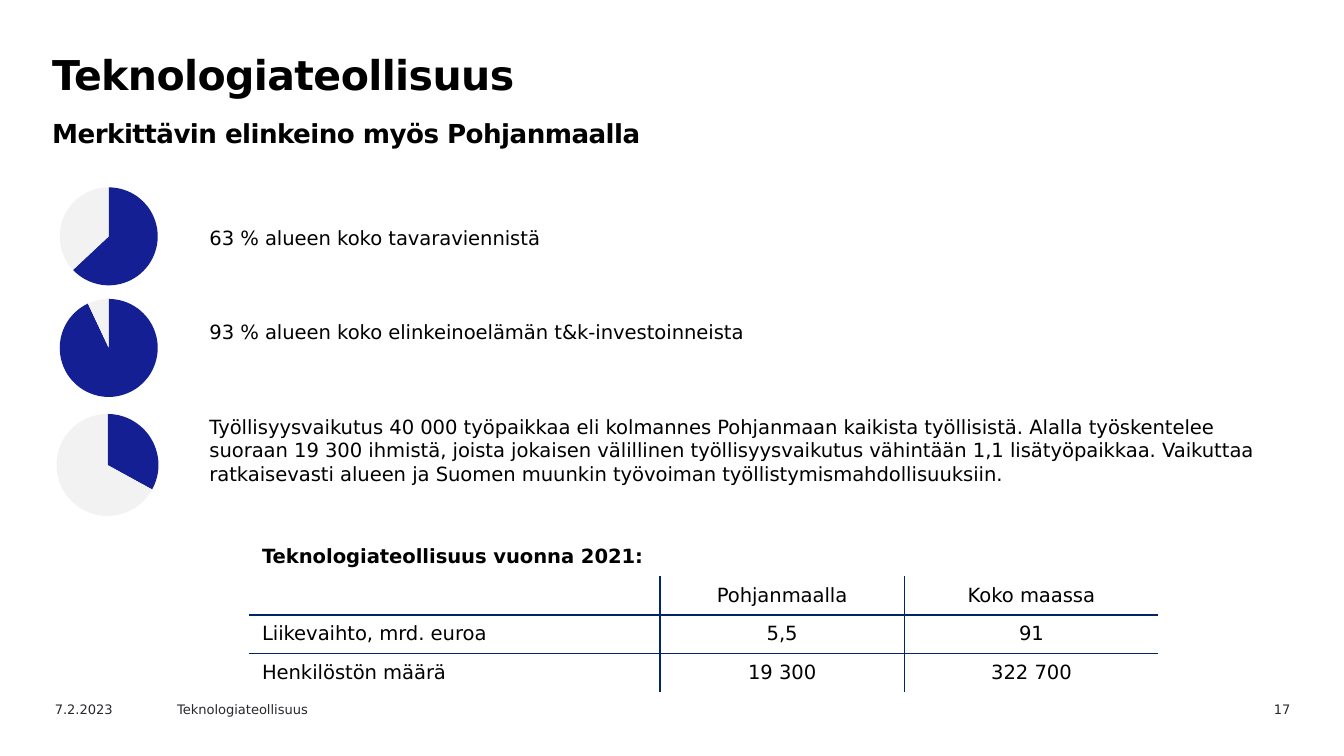
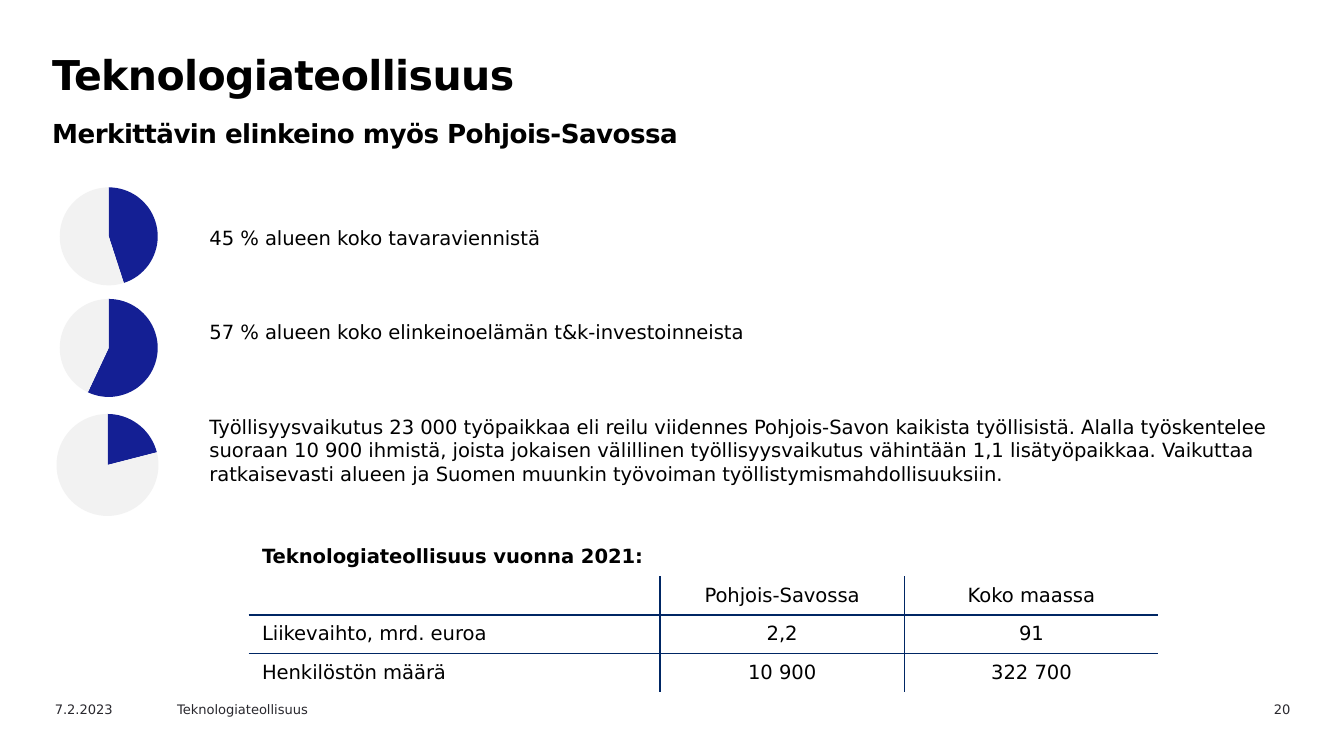
from dataclasses import dataclass

from lxml import etree
from pptx import Presentation
from pptx.chart.data import CategoryChartData
from pptx.dml.color import RGBColor
from pptx.enum.chart import XL_CHART_TYPE
from pptx.enum.text import MSO_ANCHOR, PP_ALIGN
from pptx.oxml import parse_xml
from pptx.oxml.ns import nsdecls, qn
from pptx.slide import Slide
from pptx.table import _Cell
from pptx.text.text import TextFrame
from pptx.util import Inches, Pt

LEFT, CENTER, RIGHT = PP_ALIGN.LEFT, PP_ALIGN.CENTER, PP_ALIGN.RIGHT
MIDDLE = MSO_ANCHOR.MIDDLE
PIE = XL_CHART_TYPE.PIE

FONT = "DejaVu Sans"
BLACK = RGBColor(0x00, 0x00, 0x00)
GRAPHITE = RGBColor(0x29, 0x28, 0x2E)
BLUE = RGBColor(0x14, 0x1F, 0x94)
PALE = RGBColor(0xF2, 0xF2, 0xF2)
NAVY = RGBColor(0x00, 0x26, 0x64)

INDUSTRY = "Teknologiateollisuus"
DATE = "7.2.2023"
BODY_SIZE = 10.5
PIE_SHARE = 0.73  # diameter of a pie relative to its chart frame


@dataclass(frozen=True)
class Region:
    page: int
    name_in: str  # "in the region"
    name_of: str  # "of the region"
    export_share: int
    research_share: int
    job_share: int
    job_share_words: str
    jobs: str
    turnover: str
    staff: str


@dataclass(frozen=True)
class PiePlace:
    left: float
    top: float
    size: float


REGIONS = (
    Region(17, "Pohjanmaalla", "Pohjanmaan", 63, 93, 33, "kolmannes",
           "40 000", "5,5", "19 300"),
    Region(20, "Pohjois-Savossa", "Pohjois-Savon", 45, 57, 21, "reilu viidennes",
           "23 000", "2,2", "10 900"),
)
PIE_PLACES = (
    PiePlace(0.31, 1.26, 1),
    PiePlace(0.31, 2.09, 1),
    PiePlace(0.28, 2.94, 1.04),
)


def write(frame: TextFrame, paragraphs: list[list[str]], *, sizes: tuple = (BODY_SIZE,),
          color: RGBColor = BLACK, bold: bool = False, align: PP_ALIGN = LEFT,
          gap: float = 0, line: float | None = None, spacing: int = 0) -> None:
    """Write paragraphs, each a list of lines; sizes holds one size per line."""
    frame.word_wrap = True
    for index, lines in enumerate(paragraphs):
        paragraph = frame.paragraphs[0] if index == 0 else frame.add_paragraph()
        paragraph.alignment = align
        if index:
            paragraph.space_before = Pt(gap)
        if line:
            paragraph.line_spacing = Pt(line)
        for number, (text, size) in enumerate(zip(lines, sizes)):
            if number:
                paragraph.add_line_break()
            run = paragraph.add_run()
            run.text = text
            font = run.font
            font.name, font.size, font.bold = FONT, Pt(size), bold
            font.color.rgb = color
            if spacing:
                run._r.get_or_add_rPr().set("spc", str(spacing))


def add_text(slide: Slide, left: float, top: float, width: float, height: float,
             paragraphs: list[list[str]], **style) -> None:
    box = slide.shapes.add_textbox(Inches(left), Inches(top), Inches(width), Inches(height))
    write(box.text_frame, paragraphs, **style)


def add_share_pie(slide: Slide, place: PiePlace, share: int) -> None:
    data = CategoryChartData()
    data.categories = ["1", "2"]
    data.add_series("Series 1", (share, 100 - share))
    size = Inches(place.size)
    chart = slide.shapes.add_chart(
        PIE, Inches(place.left), Inches(place.top), size, size, data).chart
    chart.has_legend = chart.has_title = False
    chart.font.name, chart.font.size = FONT, Pt(18)
    chart.font.color.rgb = GRAPHITE
    chart.plots[0].vary_by_categories = False
    shares = chart.plots[0].series[0]
    shares.format.line.color.rgb = GRAPHITE
    shares.format.line.width = Pt(0.75)
    for index, color in enumerate((BLUE, PALE)):
        fill = shares.points[index].format.fill
        fill.solid()
        fill.fore_color.rgb = color

    # Centre the pie in its frame
    plot_area = chart.element.find(f".//{qn('c:plotArea')}")
    for old_layout in plot_area.findall(qn("c:layout")):
        plot_area.remove(old_layout)
    margin = round((1 - PIE_SHARE) / 2, 3)
    plot_area.insert(0, parse_xml(
        f'<c:layout {nsdecls("c")}><c:manualLayout><c:layoutTarget val="inner"/>'
        f'<c:xMode val="edge"/><c:yMode val="edge"/>'
        f'<c:x val="{margin}"/><c:y val="{margin}"/>'
        f'<c:w val="{PIE_SHARE}"/><c:h val="{PIE_SHARE}"/>'
        f'</c:manualLayout></c:layout>'))


def set_borders(cell: _Cell, sides: dict[str, bool]) -> None:
    properties = cell._tc.get_or_add_tcPr()
    for side, shown in sides.items():
        paint = f'<a:solidFill><a:srgbClr val="{NAVY}"/></a:solidFill>' if shown else "<a:noFill/>"
        properties.append(parse_xml(
            f'<a:ln{side} {nsdecls("a")} w="{Pt(1)}">{paint}</a:ln{side}>'))


def add_key_figures(slide: Slide, region: Region) -> None:
    rows = (
        (f"{INDUSTRY} vuonna 2021:", "", ""),
        ("", region.name_in, "Koko maassa"),
        ("Liikevaihto, mrd. euroa", region.turnover, "91"),
        ("Henkilöstön määrä", region.staff, "322 700"),
    )
    widths = (3.06, 1.82, 1.89)
    table = slide.shapes.add_table(len(rows), len(widths), Inches(1.85), Inches(4),
                                   Inches(sum(widths)), Inches(1.15)).table
    table.first_row = table.horz_banding = False
    for column, width in zip(table.columns, widths):
        column.width = Inches(width)
    last_row, last_column = len(rows) - 1, len(widths) - 1
    for r, texts in enumerate(rows):
        for c, text in enumerate(texts):
            cell = table.cell(r, c)
            cell.vertical_anchor = MIDDLE
            # Inner grid lines only, below the heading row
            set_borders(cell, {"L": r > 0 and c > 0, "R": r > 0 and c < last_column,
                               "T": r > 1, "B": 0 < r < last_row})
            cell.fill.background()
            if text:
                write(cell.text_frame, [[text]], bold=r == 0, align=CENTER if c else LEFT)
            else:
                # Keep empty cells from stretching their row
                end = etree.SubElement(cell.text_frame.paragraphs[0]._p, qn("a:endParaRPr"))
                end.set("sz", str(int(BODY_SIZE * 100)))
    table.cell(0, 0).merge(table.cell(0, last_column))


def add_footer(slide: Slide, page: int) -> None:
    for left, width, text, align in ((0.31, 1, DATE, LEFT), (1.22, 1.42, INDUSTRY, LEFT),
                                     (8.76, 0.94, str(page), RIGHT)):
        add_text(slide, left, 5.17, width, 0.18, [[text]],
                 sizes=(7,), color=GRAPHITE, align=align)


def add_region_slide(prs: Presentation, region: Region) -> None:
    slide = prs.slides.add_slide(prs.slide_layouts[6])

    # Title and subtitle
    add_text(slide, 0.29, 0.31, 8.74, 0.71,
             [[INDUSTRY, f"Merkittävin elinkeino myös {region.name_in}"]],
             sizes=(22, 14), bold=True, line=27, spacing=-30)

    # Regional facts with their pies
    add_text(slide, 1.46, 1.63, 8.19, 2.42, [
        [f"{region.export_share} % alueen koko tavaraviennistä"],
        [f"{region.research_share} % alueen koko elinkeinoelämän t&k-investoinneista"],
        [f"Työllisyysvaikutus {region.jobs} työpaikkaa eli {region.job_share_words} "
         f"{region.name_of} kaikista työllisistä. Alalla työskentelee suoraan {region.staff} "
         "ihmistä, joista jokaisen välillinen työllisyysvaikutus vähintään 1,1 lisätyöpaikkaa. "
         "Vaikuttaa ratkaisevasti alueen ja Suomen muunkin työvoiman "
         "työllistymismahdollisuuksiin."],
    ], gap=38)
    shares = (region.export_share, region.research_share, region.job_share)
    for place, share in zip(PIE_PLACES, shares):
        add_share_pie(slide, place, share)

    add_key_figures(slide, region)
    add_footer(slide, region.page)


def main() -> None:
    prs = Presentation()
    # Widescreen, 16:9
    prs.slide_width = Inches(10)
    prs.slide_height = Inches(10 * 9 / 16)
    for region in REGIONS:
        add_region_slide(prs, region)
    prs.save("out.pptx")


if __name__ == "__main__":
    main()
